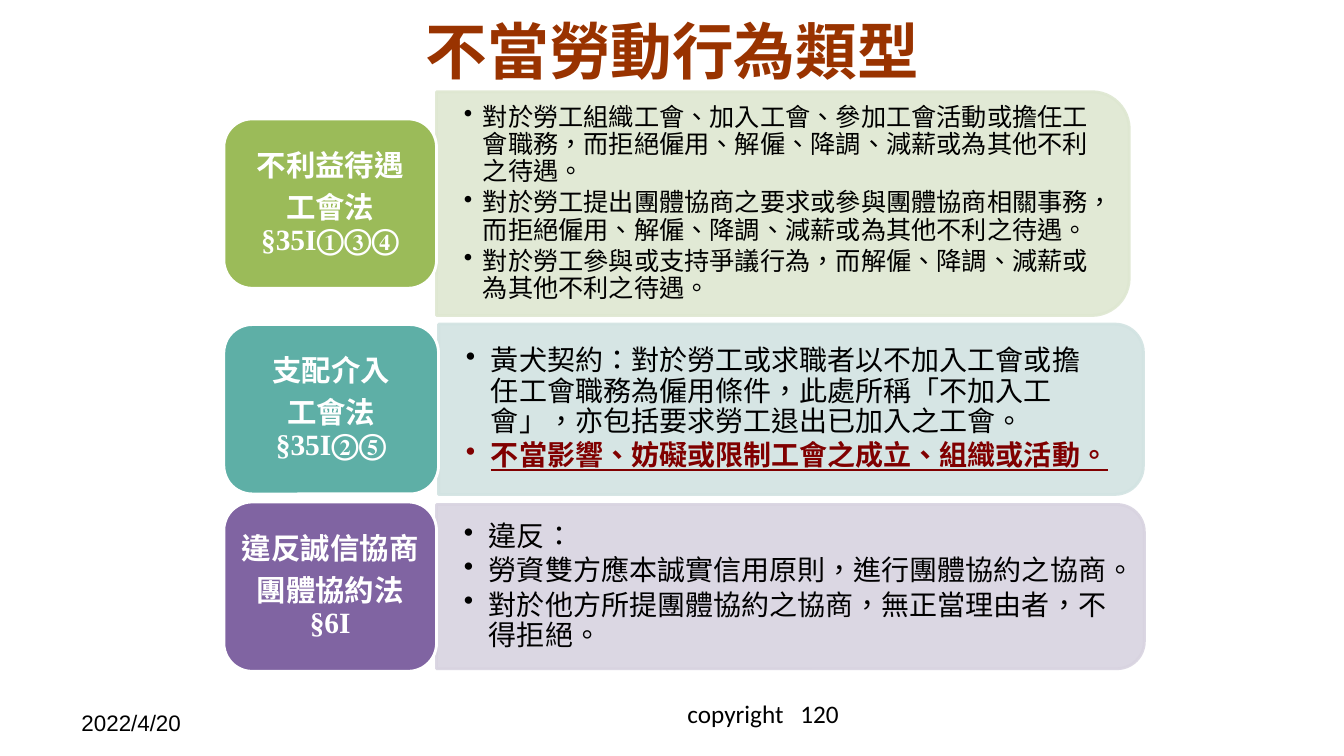
from pptx import Presentation
from pptx.dml.color import RGBColor
from pptx.enum.lang import MSO_LANGUAGE_ID as LANG
from pptx.enum.shapes import MSO_SHAPE as SHAPE
from pptx.enum.text import MSO_ANCHOR as ANCHOR, MSO_AUTO_SIZE as AUTO, PP_ALIGN as ALIGN
from pptx.oxml.ns import qn
from pptx.util import Inches, Pt
from lxml.etree import SubElement

COLORS = {
    "title": "993300", "text": "000000", "white": "FFFFFF", "accent": "800000",
    "green": "9BBB59", "pale_green": "DEE7D1",
    "teal": "5EAFA6", "pale_teal": "D2E3E2",
    "purple": "8064A2", "pale_purple": "D8D3E0",
}
SERIF = "Times New Roman"
LABEL_LEFT, LABEL_HEIGHT = 2.22, 1.68
ACCENT = dict(color="accent", bold=True, underline=True)

# Each row: centre height, label width, panel size, text size, indent, label, points
ROWS = [
    dict(hue="green", middle=2.02, label_w=2.11, panel=(6.87, 2.22), size=18, indent=0.19,
         label=["不利益待遇", "工會法\v§35I①③④"],
         points=[("對於勞工組織工會、加入工會、參加工會活動或擔任工會職務，而拒絕僱用、解僱、降調、減薪或為其他不利之待遇。", {}),
                 ("對於勞工提出團體協商之要求或參與團體協商相關事務，而拒絕僱用、解僱、降調、減薪或為其他不利之待遇。", {}),
                 ("對於勞工參與或支持爭議行為，而解僱、降調、減薪或為其他不利之待遇。", {})]),
    dict(hue="teal", middle=4.06, label_w=2.13, panel=(6.99, 1.69), size=20, indent=0.25,
         label=["支配介入", "工會法\v§35I②⑤"],
         points=[("黃犬契約：對於勞工或求職者以不加入工會或擔任工會職務為僱用條件，此處所稱「不加入工會」，亦包括要求勞工退出已加入之工會。", {}),
                 ("不當影響、妨礙或限制工會之成立、組織或活動。", ACCENT)]),
    dict(hue="purple", middle=5.82, label_w=2.11, panel=(7.02, 1.63), size=20, indent=0.25,
         label=["違反誠信協商", "團體協約法§6I"],
         points=[("違反：", {}),
                 ("勞資雙方應本誠實信用原則，進行團體協約之協商。", {}),
                 ("對於他方所提團體協約之協商，無正當理由者，不得拒絕。", {})]),
]


def rgb(name):
    return RGBColor.from_string(COLORS[name])


def write(tf, text, size, font=SERIF, color="text", bold=False, underline=False,
          align=ALIGN.LEFT, spacing=None, after=0, indent=None, tab=None):
    """Fill the empty first paragraph, or add one, and format it."""
    p = tf.paragraphs[0]
    if p.text:
        p = tf.add_paragraph()
    p.text = text
    p.alignment = align
    p.space_after = Pt(after)
    if spacing:
        p.line_spacing = spacing
    pPr = p._p.get_or_add_pPr()
    if indent:
        pPr.set("marL", str(Inches(indent)))
        pPr.set("indent", str(-Inches(indent)))
        SubElement(pPr, qn("a:buChar"), char="•")
    if tab:
        tabs = SubElement(pPr, qn("a:tabLst"))
        SubElement(tabs, qn("a:tab"), pos=str(Inches(tab)), algn="l")
    for r in p.runs:
        f = r.font
        f.name, f.size, f.bold, f.underline = font, Pt(size), bold, underline
        f.color.rgb = rgb(color)
        f.language_id = LANG.TRADITIONAL_CHINESE


def set_frame(tf, pad_x=0.1, pad_y=0.05, anchor=ANCHOR.MIDDLE):
    tf.word_wrap = True
    tf.auto_size = AUTO.NONE
    tf.vertical_anchor = anchor
    tf.margin_left = tf.margin_right = Inches(pad_x)
    tf.margin_top = tf.margin_bottom = Inches(pad_y)


def add_text_box(s, left, top, width, height, **frame):
    box = s.shapes.add_textbox(Inches(left), Inches(top), Inches(width), Inches(height))
    set_frame(box.text_frame, **frame)
    return box.text_frame


def add_block(s, kind, left, top, width, height, fill, line, alpha=None):
    sp = s.shapes.add_shape(kind, Inches(left), Inches(top), Inches(width), Inches(height))
    sp.shadow.inherit = False
    sp.fill.solid()
    sp.fill.fore_color.rgb = rgb(fill)
    sp.line.color.rgb = rgb(line)
    sp.line.width = Pt(2)
    if alpha:
        for clr in sp._element.spPr.iter(qn("a:srgbClr")):
            SubElement(clr, qn("a:alpha"), val=str(alpha * 1000))
    return sp


def add_panel(s, row):
    """Pale panel, rounded on its right side, with the bulleted points."""
    width, height = row["panel"]
    left, middle = LABEL_LEFT + row["label_w"], row["middle"]
    pale = "pale_" + row["hue"]
    # Turned a quarter, so width and height swap around the same centre
    sp = add_block(s, SHAPE.ROUND_2_SAME_RECTANGLE, left + (width - height) / 2,
                   middle - width / 2, height, width, pale, pale, alpha=90)
    sp.rotation = 90
    corner = 0.05 * height
    tf = add_text_box(s, left, middle - height / 2 + corner, width - corner,
                      height - 2 * corner, pad_x=0.27, pad_y=0.14)
    for text, look in row["points"]:
        write(tf, text, row["size"], spacing=0.9, after=0.15 * row["size"],
              indent=row["indent"], **look)


def add_label(s, row):
    sp = add_block(s, SHAPE.ROUNDED_RECTANGLE, LABEL_LEFT, row["middle"] - LABEL_HEIGHT / 2,
                   row["label_w"], LABEL_HEIGHT, row["hue"], "white")
    set_frame(sp.text_frame, pad_x=0.09, pad_y=0.04)
    for text in row["label"]:
        write(sp.text_frame, text, 21, color="white", bold=True, align=ALIGN.CENTER,
              spacing=0.9, after=7.35)


def add_title(s, text):
    title = s.shapes.title
    title.left, title.top = Inches(0.37), Inches(0.08)
    title.width, title.height = Inches(12.6), Inches(0.83)
    set_frame(title.text_frame)
    write(title.text_frame, text, 44, font="Noto Sans CJK SC", color="title", bold=True,
          align=ALIGN.CENTER)


def main():
    prs = Presentation()
    prs.slide_width, prs.slide_height = Inches(13.33), Inches(7.5)
    s = prs.slides.add_slide(prs.slide_layouts[5])
    add_title(s, "不當勞動行為類型")

    # Three types, each a panel with its label
    for row in ROWS:
        add_panel(s, row)
        add_label(s, row)

    # Footer
    tf = add_text_box(s, 6.72, 6.88, 1.84, 0.57, anchor=ANCHOR.TOP)
    write(tf, "copyright\t120", 18, font="Calibri", tab=1.12)
    tf = add_text_box(s, 0.71, 6.88, 1.79, 0.57)
    write(tf, "2022/4/20", 16, font="Arial")

    prs.save("out.pptx")


if __name__ == "__main__":
    main()
